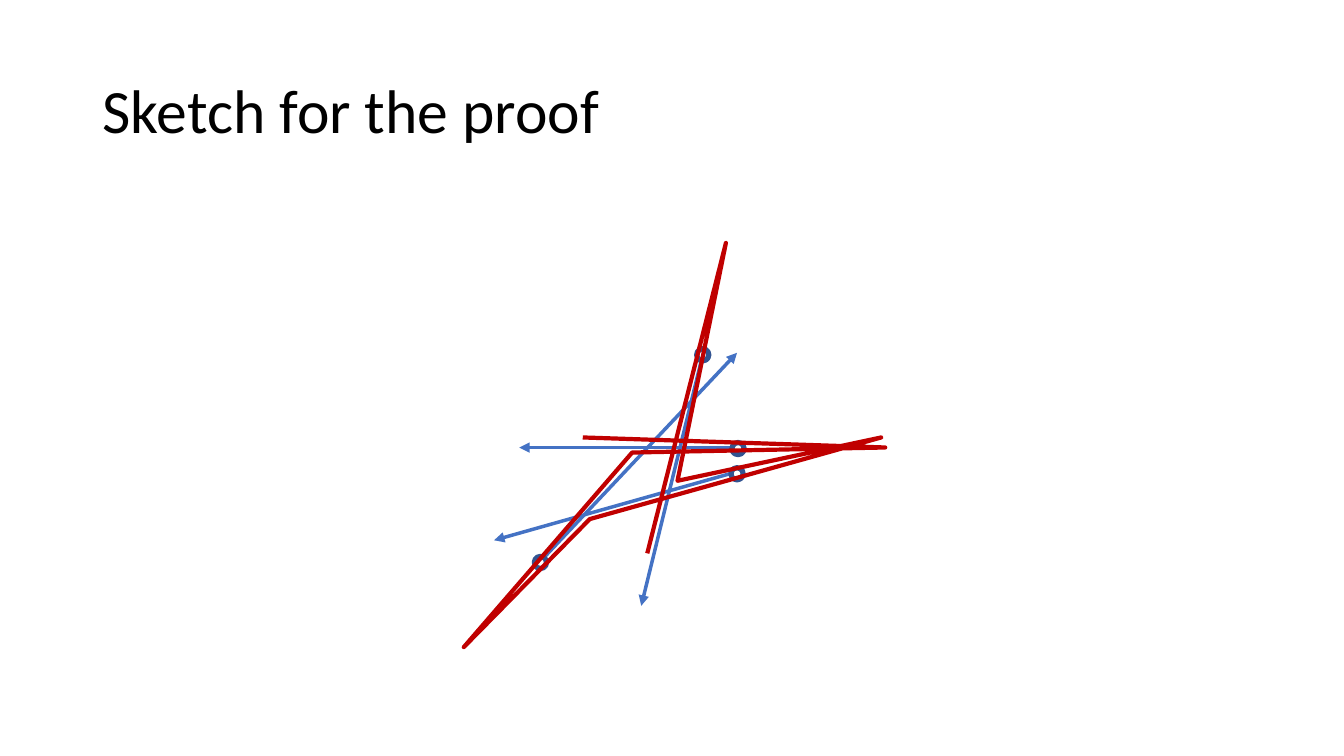
from lxml import etree
from pptx import Presentation
from pptx.dml.color import RGBColor
from pptx.enum.shapes import MSO_CONNECTOR, MSO_SHAPE
from pptx.enum.text import MSO_ANCHOR
from pptx.oxml.ns import qn
from pptx.util import Inches, Pt

STRAIGHT = MSO_CONNECTOR.STRAIGHT
OVAL = MSO_SHAPE.OVAL
MIDDLE = MSO_ANCHOR.MIDDLE

COLORS = {"text": "000000", "ray": "4472C4", "ring": "325491",
          "center": "FFFFFF", "path": "C00000"}
FONT = "Calibri"
RING_SIZE = 0.12

RAYS = [
    ((6.97, 3.52), (6.36, 6.01)),
    ((7.31, 4.68), (4.9, 5.36)),
    ((5.34, 5.59), (7.31, 3.5)),
    ((7.34, 4.44), (5.15, 4.44)),
]
RING_CENTERS = [(7.31, 4.7), (7.32, 4.45), (5.36, 5.58), (6.97, 3.52)]
PATH_POINTS = [
    (5.78, 4.34), (8.78, 4.44), (6.27, 4.49), (4.6, 6.42), (5.85, 5.15),
    (8.74, 4.34), (6.72, 4.77), (7.2, 2.41), (6.42, 5.49),
]


def rgb(name):
    return RGBColor.from_string(COLORS[name])


def set_line(sp, color, width):
    sp.line.color.rgb = rgb(color)
    sp.line.width = Pt(width)


def add_title(s, text):
    sp = s.shapes.add_textbox(Inches(0.92), Inches(0.4), Inches(11.5), Inches(1.45))
    tf = sp.text_frame
    tf.word_wrap = True
    tf.vertical_anchor = MIDDLE
    tf.text = text
    p = tf.paragraphs[0]
    p.line_spacing = 0.9
    font = p.runs[0].font
    font.name = FONT
    font.size = Pt(44)
    font.color.rgb = rgb("text")


def add_ray(s, start, end):
    """Draw an arrow from start to end."""
    sp = s.shapes.add_connector(STRAIGHT, *map(Inches, start + end))
    set_line(sp, "ray", 2.5)
    etree.SubElement(sp.line._get_or_add_ln(), qn("a:tailEnd"), type="triangle")
    etree.SubElement(sp._element.spPr, qn("a:effectLst"))


def add_ring(s, x, y):
    """Draw a small ring centred on (x, y)."""
    size = Inches(RING_SIZE)
    sp = s.shapes.add_shape(OVAL, Inches(x - RING_SIZE / 2),
                            Inches(y - RING_SIZE / 2), size, size)
    sp.shadow.inherit = False
    sp.fill.solid()
    sp.fill.fore_color.rgb = rgb("center")
    set_line(sp, "ring", 3.75)


def add_open_path(s, points):
    start, *rest = [(Inches(x), Inches(y)) for x, y in points]
    builder = s.shapes.build_freeform(*start)
    builder.add_line_segments(rest, close=False)
    sp = builder.convert_to_shape()
    sp.shadow.inherit = False
    sp.fill.background()
    set_line(sp, "path", 3)


def main():
    prs = Presentation()
    prs.slide_width = Inches(13.33)
    prs.slide_height = Inches(7.5)
    s = prs.slides.add_slide(prs.slide_layouts[6])
    add_title(s, "Sketch for the proof")
    for start, end in RAYS:
        add_ray(s, start, end)
    for x, y in RING_CENTERS:
        add_ring(s, x, y)
    add_open_path(s, PATH_POINTS)
    prs.save("out.pptx")


if __name__ == "__main__":
    main()
